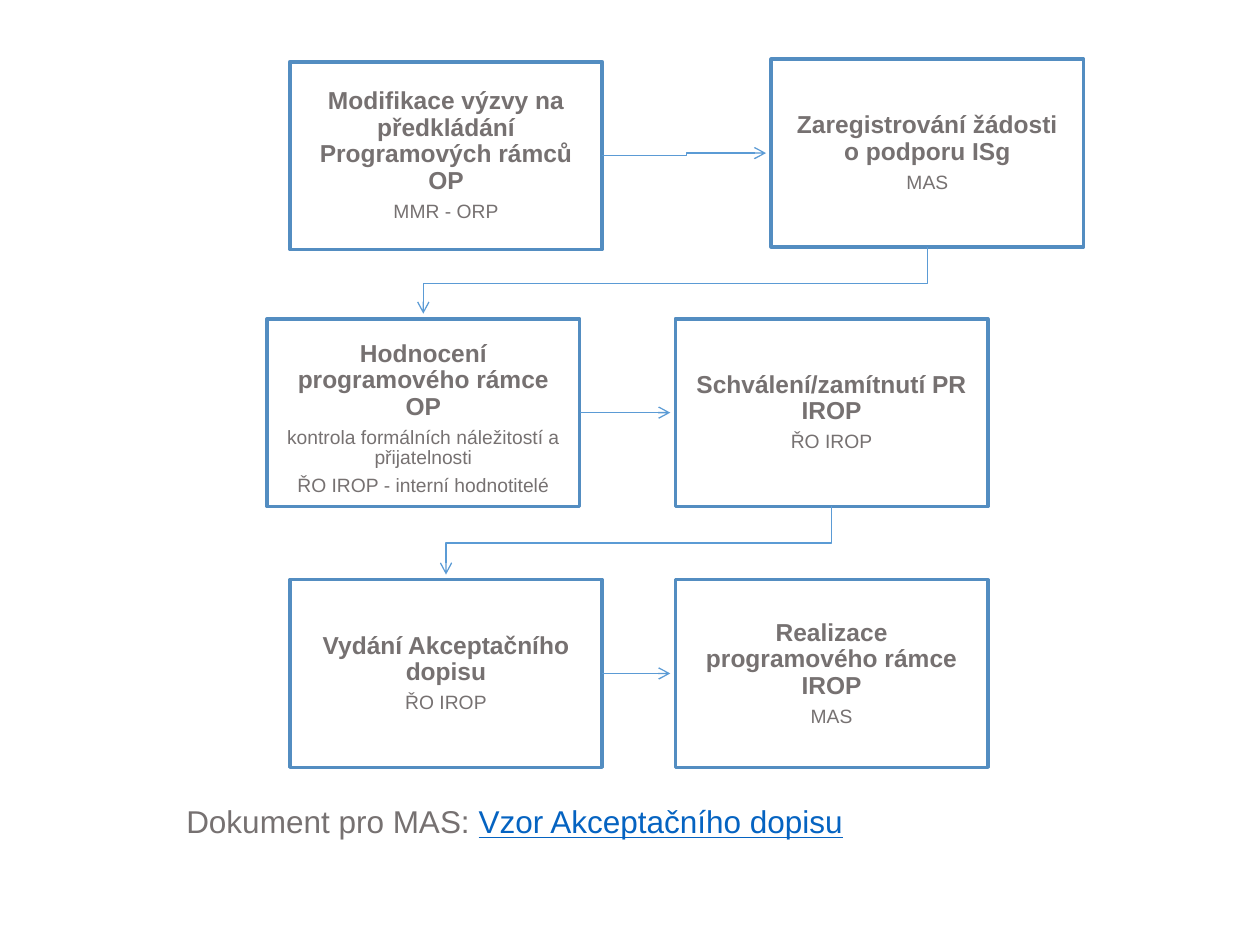
import dataclasses
import typing

import lxml.etree
import pptx
import pptx.dml.color
import pptx.enum.shapes
import pptx.enum.text
import pptx.oxml.ns
import pptx.util

Inches = pptx.util.Inches
Pt = pptx.util.Pt
qn = pptx.oxml.ns.qn

COLORS = {
    "box": "FFFFFF",
    "border": "538DC1",
    "arrow": "5B9BD5",
    "text": "767171",
    "link": "0563C1",
}
BOX_W, BOX_H = 2.48, 1.49
INSET = 0.11
ARROW_GAP = 0.04  # space between an arrowhead and its box


@dataclasses.dataclass
class Step:
    x: float
    y: float
    title: str
    details: typing.Tuple[str, ...]
    shift: float = 0  # moves the text down inside the box

    @property
    def mid_x(self) -> float:
        return self.x + BOX_W / 2

    @property
    def mid_y(self) -> float:
        return self.y + BOX_H / 2

    @property
    def right(self) -> float:
        return self.x + BOX_W

    @property
    def bottom(self) -> float:
        return self.y + BOX_H


STEPS = [
    Step(2.3, 0.49, "Modifikace výzvy na předkládání Programových rámců OP",
         ("MMR - ORP",)),
    Step(6.12, 0.47, "Zaregistrování žádosti\no podporu ISg", ("MAS",)),
    Step(2.12, 2.53, "Hodnocení programového rámce OP",
         ("kontrola formálních náležitostí a přijatelnosti",
          "ŘO IROP - interní hodnotitelé"), shift=0.05),
    Step(5.36, 2.53, "Schválení/zamítnutí PR IROP", ("ŘO IROP",)),
    Step(2.3, 4.6, "Vydání Akceptačního dopisu", ("ŘO IROP",)),
    Step(5.36, 4.6, "Realizace programového rámce IROP", ("MAS",)),
]


def rgb(name: str) -> pptx.dml.color.RGBColor:
    return pptx.dml.color.RGBColor.from_string(COLORS[name])


def add_text(p, text: str, *, size: float, color: str = "text",
             bold: bool = False, underline: bool = False) -> None:
    for i, line in enumerate(text.split("\n")):
        if i:
            p.add_line_break()
        r = p.add_run()
        r.text = line
        r.font.name = "Arial"
        r.font.size = Pt(size)
        r.font.bold = bold
        r.font.underline = underline
        r.font.color.rgb = rgb(color)


def draw_step(shapes, step: Step):
    sp = shapes.add_shape(pptx.enum.shapes.MSO_SHAPE.RECTANGLE, Inches(step.x),
                          Inches(step.y), Inches(BOX_W), Inches(BOX_H))
    sp.shadow.inherit = False
    sp.fill.solid()
    sp.fill.fore_color.rgb = rgb("box")
    sp.line.color.rgb = rgb("border")
    sp.line.width = Pt(2)

    tf = sp.text_frame
    tf.word_wrap = True
    tf.vertical_anchor = pptx.enum.text.MSO_ANCHOR.MIDDLE
    tf.margin_left = tf.margin_right = Inches(INSET)
    tf.margin_top = Inches(INSET + step.shift)
    tf.margin_bottom = Inches(INSET - step.shift)
    for i, text in enumerate((step.title,) + step.details):
        p = tf.add_paragraph() if i else tf.paragraphs[0]
        p.alignment = pptx.enum.text.PP_ALIGN.CENTER
        p.line_spacing = 0.9
        if i < len(step.details):
            p.space_after = Pt(4)
        add_text(p, text, size=11 if i else 14, bold=i == 0)
    return sp


def style_arrow(sp) -> None:
    sp.line.color.rgb = rgb("arrow")
    sp.line.width = Pt(0.75)
    lxml.etree.SubElement(sp.line._get_or_add_ln(), qn("a:tailEnd"), type="arrow")


def draw_straight(shapes, start: Step, end: Step, start_box) -> None:
    sp = shapes.add_connector(
        pptx.enum.shapes.MSO_CONNECTOR.STRAIGHT, Inches(start.right),
        Inches(start.mid_y), Inches(end.x - ARROW_GAP), Inches(end.mid_y))
    sp.begin_connect(start_box, 3)
    style_arrow(sp)
    lxml.etree.SubElement(sp._element.spPr, qn("a:effectLst"))


def draw_bent(shapes, points: typing.List[typing.Tuple[float, float]]) -> None:
    path = [(Inches(x), Inches(y)) for x, y in points]
    builder = shapes.build_freeform(*path[0], scale=1.0)
    builder.add_line_segments(path[1:], close=False)
    sp = builder.convert_to_shape()
    sp.shadow.inherit = False
    sp.fill.background()
    style_arrow(sp)


def draw_return(shapes, start: Step, end: Step) -> None:
    """Arrow from the end of one row down to the start of the next."""
    turn_y = start.bottom + 0.29
    draw_bent(shapes, [(start.mid_x, start.bottom), (start.mid_x, turn_y),
                       (end.mid_x, turn_y), (end.mid_x, end.y - ARROW_GAP)])


def main() -> None:
    prs = pptx.Presentation()
    prs.slide_width, prs.slide_height = Inches(10), Inches(7.5)
    s = prs.slides.add_slide(prs.slide_layouts[6])

    # Process steps
    boxes = [draw_step(s.shapes, step) for step in STEPS]

    # Arrows within rows
    first, second = STEPS[:2]
    turn_x = (first.right + second.x) / 2
    draw_bent(s.shapes, [(first.right, first.mid_y), (turn_x, first.mid_y),
                         (turn_x, second.mid_y),
                         (second.x - ARROW_GAP, second.mid_y)])
    for i in (2, 4):
        draw_straight(s.shapes, STEPS[i], STEPS[i + 1], boxes[i])

    # Arrows between rows
    for i in (1, 3):
        draw_return(s.shapes, STEPS[i], STEPS[i + 1])

    # Document line
    tb = s.shapes.add_textbox(Inches(1.38), Inches(6.32), Inches(6.78), Inches(0.4))
    tb.text_frame.word_wrap = True
    p = tb.text_frame.paragraphs[0]
    add_text(p, "Dokument pro MAS: ", size=18)
    add_text(p, "Vzor Akceptačního dopisu", size=18, color="link", underline=True)

    prs.save("out.pptx")


if __name__ == "__main__":
    main()
